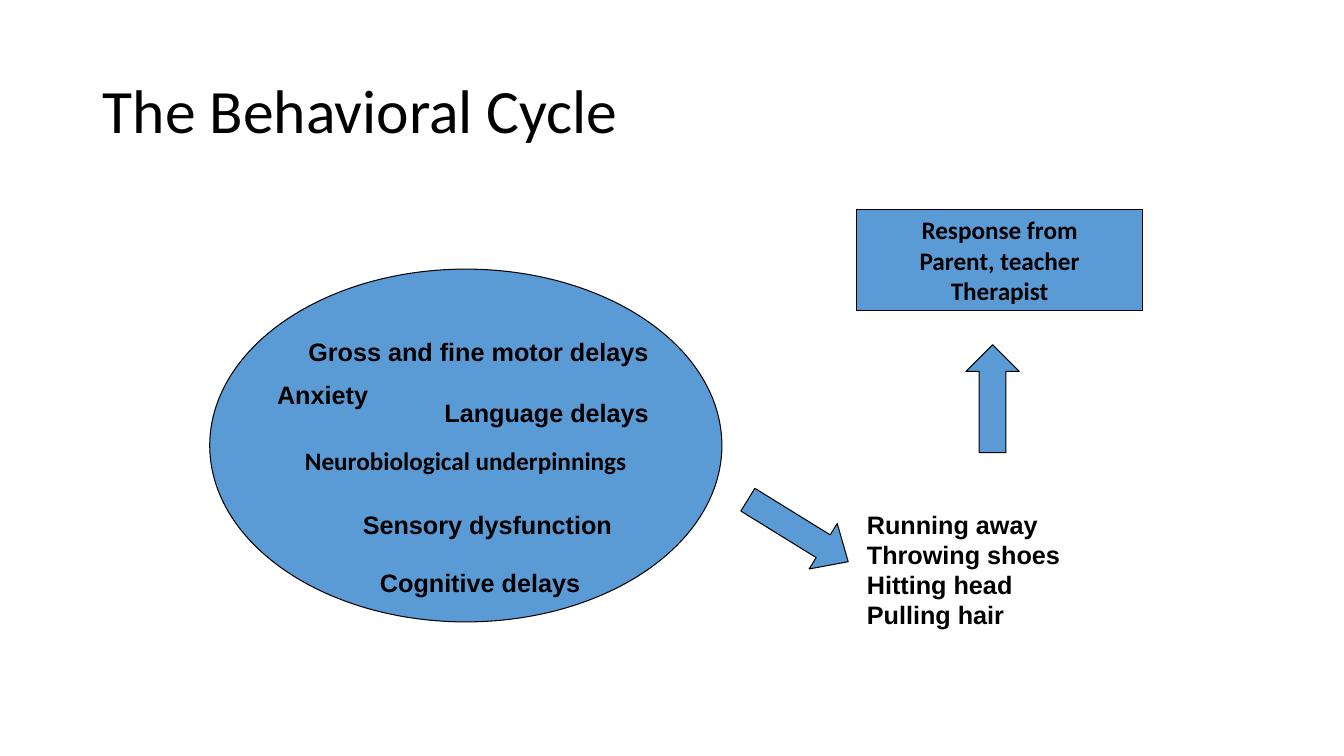
from pptx import Presentation
from pptx.util import Inches, Pt
from pptx.dml.color import RGBColor
from pptx.enum import shapes, text

# Content: wording and places (left, top, width, height in inches)
TITLE = "The Behavioral Cycle"
TITLE_BOX = (0.92, 0.4, 11.5, 1.45)
COLORS = {"fill": "5B9BD5", "ink": "000000"}
KIND = shapes.MSO_SHAPE

CAUSES_OVAL = (KIND.OVAL, (2.08, 2.67, 5.08, 3.5), ["Neurobiological underpinnings"])
RESPONSE_BOX = (KIND.RECTANGLE, (8.5, 2.08, 2.83, 1),
                ["Response from", "Parent, teacher", "Therapist"])
ARROWS = [  # kind, place, rotation, head length ratio
    (KIND.RIGHT_ARROW, (7.33, 5, 1.17, 0.53), 31.7, 0.55),
    (KIND.UP_ARROW, (9.58, 3.42, 0.53, 1.07), 0, 0.5),
]
CAUSES = [
    ("Gross and fine motor delays", (2.96, 3.29, 3.61, 0.4)),
    ("Anxiety", (2.65, 3.71, 1.1, 0.4)),
    ("Language delays", (4.31, 3.89, 2.23, 0.4)),
    ("Sensory dysfunction", (3.5, 5, 2.67, 0.4)),
    ("Cognitive delays", (3.67, 5.58, 2.19, 0.4)),
]
BEHAVIORS = ["Running away", "Throwing shoes", "Hitting head", "Pulling hair"]
BEHAVIORS_BOX = (8.5, 5, 2.75, 1.3)

HEADING = {"name": "Calibri", "size": Pt(44), "bold": False}
SHAPE_FONT = {"name": "Calibri", "size": Pt(18), "bold": True}
LABEL_FONT = {"name": "Arial", "size": Pt(18), "bold": True}


def rgb(name):
    return RGBColor.from_string(COLORS[name])


def inches(box):
    return [Inches(v) for v in box]


def write(tf, lines, font, align):
    for i, line in enumerate(lines):
        p = tf.paragraphs[0] if i == 0 else tf.add_paragraph()
        p.alignment = align
        r = p.add_run()
        r.text = line
        for key, value in font.items():
            setattr(r.font, key, value)
        r.font.color.rgb = rgb("ink")


def add_blue_shape(s, kind, box):
    sp = s.shapes.add_shape(kind, *inches(box))
    sp.shadow.inherit = False
    sp.fill.solid()
    sp.fill.fore_color.rgb = rgb("fill")
    sp.line.color.rgb = rgb("ink")
    sp.line.width = Pt(0.75)
    return sp


def add_filled_text(s, kind, box, lines):
    sp = add_blue_shape(s, kind, box)
    sp.text_frame.word_wrap = False
    sp.text_frame.vertical_anchor = text.MSO_ANCHOR.MIDDLE
    write(sp.text_frame, lines, SHAPE_FONT, text.PP_ALIGN.CENTER)
    return sp


def add_label(s, lines, box, wrap):
    tf = s.shapes.add_textbox(*inches(box)).text_frame
    tf.word_wrap = wrap
    tf.auto_size = text.MSO_AUTO_SIZE.SHAPE_TO_FIT_TEXT
    write(tf, lines, LABEL_FONT, text.PP_ALIGN.LEFT)


def main():
    prs = Presentation()
    prs.slide_width, prs.slide_height = Inches(13.33), Inches(7.5)
    s = prs.slides.add_slide(prs.slide_layouts[5])

    # Title
    title = s.shapes.title
    title.left, title.top, title.width, title.height = inches(TITLE_BOX)
    title.text_frame.vertical_anchor = text.MSO_ANCHOR.MIDDLE
    write(title.text_frame, [TITLE], HEADING, text.PP_ALIGN.LEFT)
    title.text_frame.paragraphs[0].line_spacing = 0.9

    # Oval and response box; the oval's wording sits just below its centre
    oval = add_filled_text(s, *CAUSES_OVAL)
    oval.text_frame.margin_top = Inches(0.35)
    add_filled_text(s, *RESPONSE_BOX)

    # Arrows
    for kind, box, rotation, head in ARROWS:
        arrow = add_blue_shape(s, kind, box)
        arrow.rotation = rotation
        arrow.adjustments[0] = 0.5
        arrow.adjustments[1] = head

    # Causes inside the oval, behaviors at the right
    for cause, box in CAUSES:
        add_label(s, [cause], box, False)
    add_label(s, BEHAVIORS, BEHAVIORS_BOX, True)

    prs.save("out.pptx")


if __name__ == "__main__":
    main()
